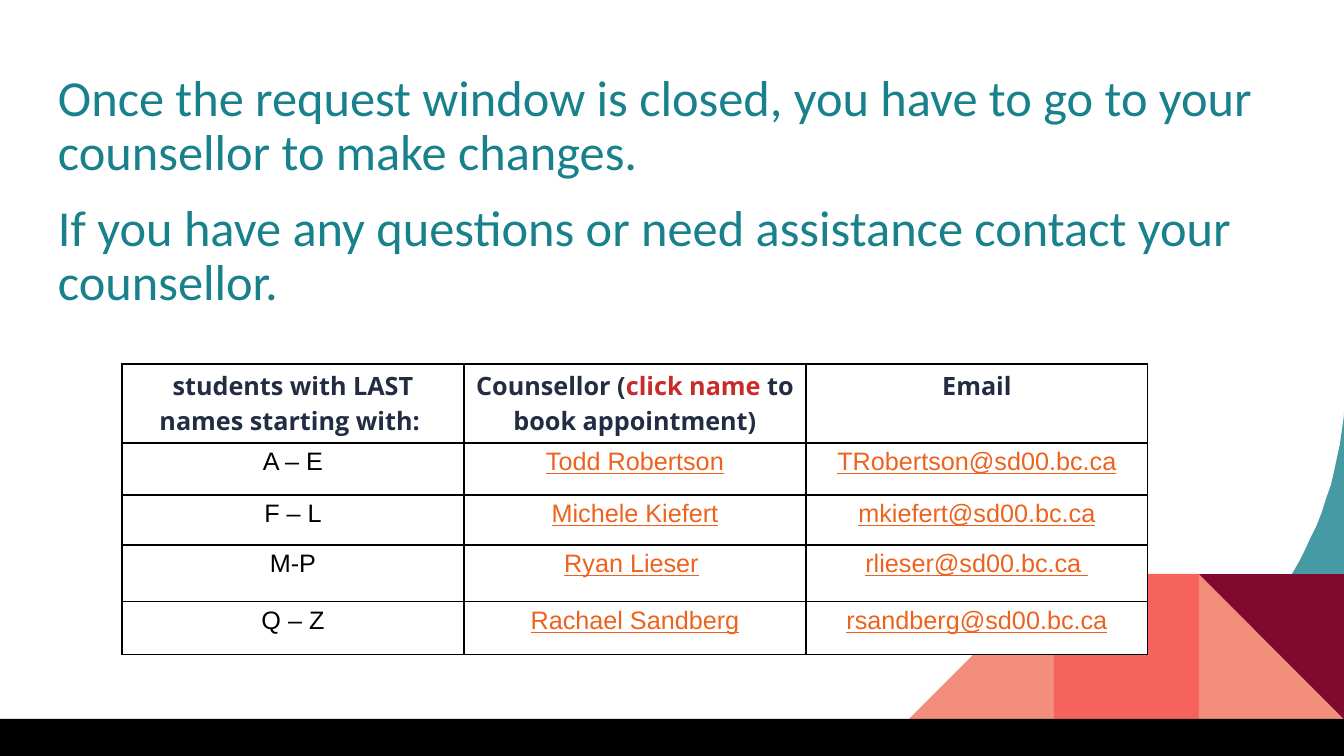
import pptx
import pptx.dml.color
import pptx.enum.shapes
import pptx.enum.text
import pptx.oxml
import pptx.oxml.ns
import pptx.util

RGB = pptx.dml.color.RGBColor
SHAPE = pptx.enum.shapes.MSO_SHAPE
TEAL = RGB(0x18, 0x81, 0x8C)
SALMON = RGB(0xF4, 0x8E, 0x7C)
CORAL = RGB(0xF6, 0x63, 0x5C)
MAROON = RGB(0x80, 0x0A, 0x2F)
BLACK = RGB(0, 0, 0)
WHITE = RGB(0xFF, 0xFF, 0xFF)
NAVY = RGB(0x22, 0x2C, 0x43)
RED = RGB(0xC9, 0x2A, 0x2A)
ORANGE = RGB(0xED, 0x62, 0x1D)

MESSAGES = [
    "Once the request window is closed, you have to go to your counsellor to make changes.",
    "If you have any questions or need assistance contact your counsellor.",
]
HEADER = [
    [("students with LAST names starting with: ", NAVY)],
    [("Counsellor (", NAVY), ("click name", RED), (" to book appointment)", NAVY)],
    [("Email", NAVY)],
]
COUNSELLORS = [
    ("A – E", "Todd Robertson", "", "TRobertson@sd00.bc.ca"),
    ("F – L", "Michele Kiefert", "", "mkiefert@sd00.bc.ca"),
    ("M-P", "Ryan Lieser", " ", "rlieser@sd00.bc.ca "),
    ("Q – Z", "Rachael Sandberg", "", "rsandberg@sd00.bc.ca"),
]
ROW_HEIGHTS = [79, 52, 50, 57, 53]
COLUMN_WIDTH = 342
TABLE_LEFT, TABLE_TOP = 122, 364

TILE, TILES_LEFT, TILES_TOP = 145, 909, 574
TILES = [
    (0, SHAPE.RIGHT_TRIANGLE, 270, SALMON),
    (1, SHAPE.RECTANGLE, 0, CORAL),
    (2, SHAPE.RIGHT_TRIANGLE, 0, SALMON),
    (2, SHAPE.RIGHT_TRIANGLE, 180, MAROON),
]
ARC = [(975, 756), (1167, 756), (1325, 607), (1344, 416)]
ARC_STEPS = 40
SCALE = 914400 / 100.8


def px(n):
    return pptx.util.Emu(round(n * SCALE))


def paint(sp, color):
    sp.shadow.inherit = False
    sp.fill.solid()
    sp.fill.fore_color.rgb = color
    sp.line.fill.background()


def add_block(shapes, kind, left, top, width, height, color, rotation=0):
    sp = shapes.add_shape(kind, px(left), px(top), px(width), px(height))
    sp.rotation = rotation
    paint(sp, color)


def arc_point(t):
    weights = [(1 - t) ** 3, 3 * t * (1 - t) ** 2, 3 * t * t * (1 - t), t ** 3]
    return tuple(round(sum(w * p[i] for w, p in zip(weights, ARC))) for i in (0, 1))


def add_arc(shapes):
    points = [arc_point(i / ARC_STEPS) for i in range(ARC_STEPS + 1)]
    builder = shapes.build_freeform(*points[0], scale=SCALE)
    builder.add_line_segments(points[1:] + [(1344, 411), (1344, 756)], close=True)
    sp = builder.convert_to_shape()
    paint(sp, TEAL)
    color = sp._element.spPr.find(".//" + pptx.oxml.ns.qn("a:srgbClr"))
    color.append(pptx.oxml.parse_xml(
        f'<a:alpha {pptx.oxml.ns.nsdecls("a")} val="80000"/>'))


def add_message(shapes):
    box = shapes.add_textbox(px(45), px(60), px(1252), px(262))
    tf = box.text_frame
    tf.word_wrap = True
    tf.margin_left = tf.margin_right = tf.margin_top = tf.margin_bottom = px(13)
    for i, message in enumerate(MESSAGES):
        p = tf.add_paragraph() if i else tf.paragraphs[0]
        p.text = message
        p.line_spacing = 0.9
        p.space_before = pptx.util.Pt(15 if i else 0)
        p.font.name = "Calibri"
        p.font.size = pptx.util.Pt(36)
        p.font.color.rgb = TEAL


def set_borders(cell):
    tcPr = cell._tc.get_or_add_tcPr()
    for i, side in enumerate(("lnL", "lnR", "lnT", "lnB")):
        tcPr.insert(i, pptx.oxml.parse_xml(
            f'<a:{side} {pptx.oxml.ns.nsdecls("a")} w="12700"><a:solidFill>'
            f'<a:srgbClr val="{BLACK}"/></a:solidFill></a:{side}>'))


def fill_cell(cell, runs, is_header):
    cell.fill.solid()
    cell.fill.fore_color.rgb = WHITE
    set_borders(cell)
    p = cell.text_frame.paragraphs[0]
    p.alignment = pptx.enum.text.PP_ALIGN.CENTER
    p.font.name = "Open Sans" if is_header else "Arial"
    p.font.size = pptx.util.Pt(18)
    p.font.bold = is_header
    for text, color in runs:
        r = p.add_run()
        r.text = text
        r.font.name = p.font.name
        r.font.size = p.font.size
        r.font.bold = is_header
        r.font.color.rgb = color
        r.font.underline = color == ORANGE


def add_counsellor_table(shapes):
    rows = [HEADER]
    for letters, name, tail, email in COUNSELLORS:
        name_runs = [(name, ORANGE)] + ([(tail, BLACK)] if tail else [])
        rows.append([[(letters, BLACK)], name_runs, [(email, ORANGE)]])
    columns = len(HEADER)
    table = shapes.add_table(
        len(rows), columns, px(TABLE_LEFT), px(TABLE_TOP),
        px(COLUMN_WIDTH * columns), px(sum(ROW_HEIGHTS))).table
    table.first_row = table.horz_banding = False
    for column in table.columns:
        column.width = px(COLUMN_WIDTH)
    for i, (row, height) in enumerate(zip(rows, ROW_HEIGHTS)):
        table.rows[i].height = px(height)
        for j, runs in enumerate(row):
            fill_cell(table.cell(i, j), runs, i == 0)


def main():
    prs = pptx.Presentation()
    prs.slide_width, prs.slide_height = px(1344), px(756)
    shapes = prs.slides.add_slide(prs.slide_layouts[6]).shapes
    add_arc(shapes)
    for column, kind, rotation, color in TILES:
        add_block(shapes, kind, TILES_LEFT + column * TILE, TILES_TOP,
                  TILE, TILE, color, rotation)
    add_block(shapes, SHAPE.RECTANGLE, 0, 719, 1344, 37, BLACK)
    add_message(shapes)
    add_counsellor_table(shapes)
    prs.save("out.pptx")


if __name__ == "__main__":
    main()
